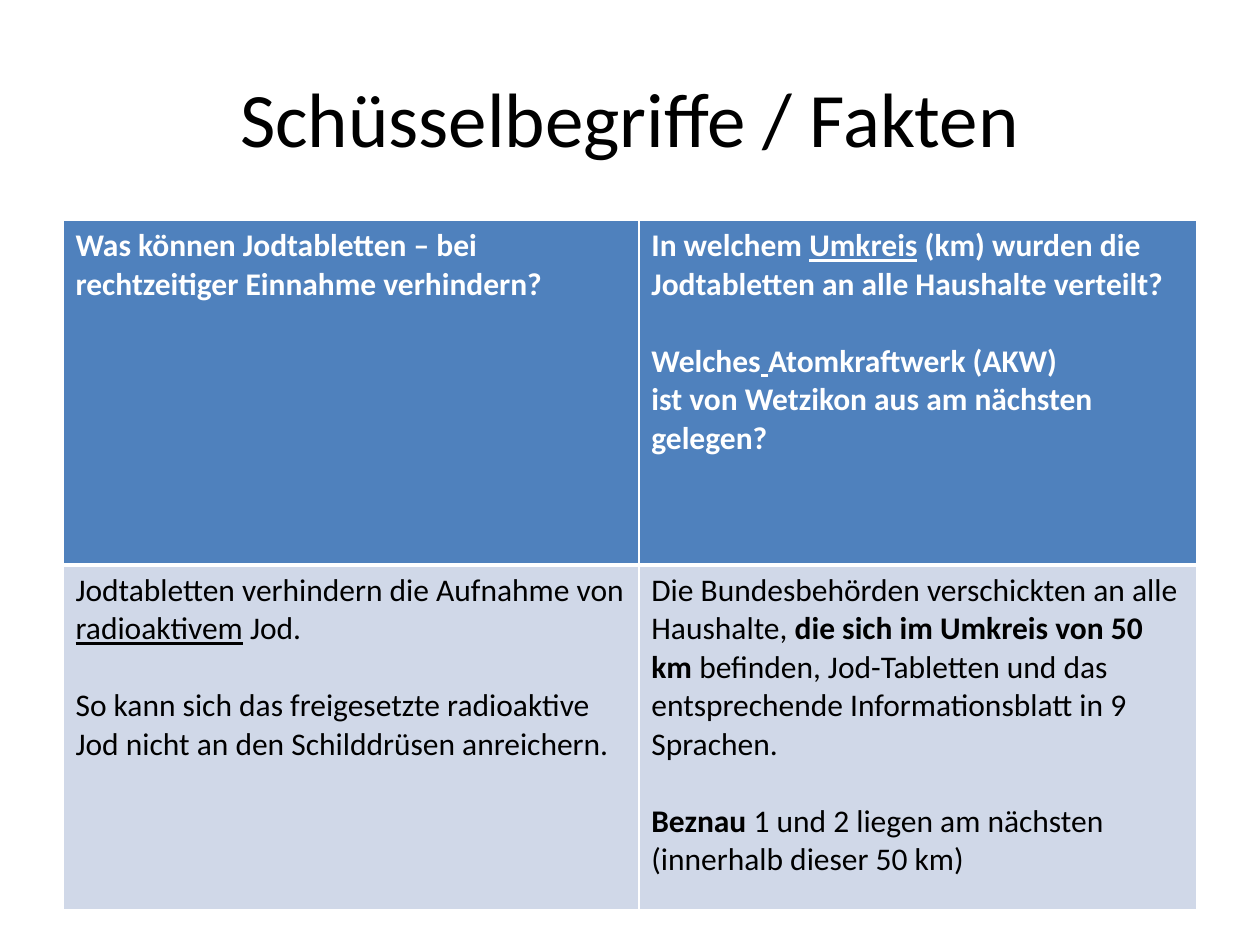
from lxml import etree
from pptx import Presentation
from pptx.dml.color import RGBColor
from pptx.enum.text import MSO_ANCHOR, PP_ALIGN
from pptx.oxml.ns import qn
from pptx.util import Inches, Pt

CENTER = PP_ALIGN.CENTER
MIDDLE = MSO_ANCHOR.MIDDLE
FONT = "Calibri"
TEXT_SIZE = 18
BLOCK_GAP = 22
PLAIN, BOLD, UNDERLINE = "plain", "bold", "underline"

QUESTIONS = [
    [
        (0, [("Was können Jodtabletten – bei rechtzeitiger Einnahme verhindern?", PLAIN)]),
    ],
    [
        (0, [("In welchem ", PLAIN), ("Umkreis", UNDERLINE),
             (" (km) wurden die Jodtabletten an alle Haushalte verteilt?", PLAIN)]),
        (BLOCK_GAP, [("Welches", PLAIN), (" ", UNDERLINE), ("Atomkraftwerk (AKW)", PLAIN)]),
        (0, [("ist von Wetzikon aus am nächsten gelegen?", PLAIN)]),
    ],
]
ANSWERS = [
    [
        (0, [("Jodtabletten verhindern die Aufnahme von ", PLAIN),
             ("radioaktivem", UNDERLINE), (" Jod.", PLAIN)]),
        (BLOCK_GAP, [("So kann sich das freigesetzte radioaktive Jod nicht an den "
                      "Schilddrüsen anreichern.", PLAIN)]),
    ],
    [
        (0, [("Die Bundesbehörden verschickten an alle Haushalte, ", PLAIN),
             ("die sich im Umkreis von 50 km ", BOLD),
             ("befinden, Jod-Tabletten und das entsprechende Informationsblatt in 9 Sprachen.",
              PLAIN)]),
        (BLOCK_GAP, [("Beznau", BOLD),
                     (" 1 und 2 liegen am nächsten (innerhalb dieser 50 km)", PLAIN)]),
    ],
]


def color(value):
    return RGBColor.from_string(value)


def style_font(font, size, value, bold=False):
    font.name = FONT
    font.size = Pt(size)
    font.bold = bold
    font.color.rgb = color(value)


def add_title(page, left, top, width, height):
    box = page.shapes.add_textbox(left, top, width, height)
    frame = box.text_frame
    frame.word_wrap = True
    frame.vertical_anchor = MIDDLE
    para = frame.paragraphs[0]
    para.text = "Schüsselbegriffe / Fakten"
    para.alignment = CENTER
    style_font(para.font, 44, "000000")


def set_borders(cell, widths):
    properties = cell._tc.get_or_add_tcPr()
    for side, width in widths.items():
        line = etree.SubElement(properties, qn(f"a:ln{side}"), w=str(Pt(width)))
        fill = etree.SubElement(line, qn("a:solidFill"))
        etree.SubElement(fill, qn("a:srgbClr"), val="FFFFFF")


def write_cell(cell, paragraphs, text_color, bold):
    frame = cell.text_frame
    for index, (gap, pieces) in enumerate(paragraphs):
        para = frame.add_paragraph() if index else frame.paragraphs[0]
        para.space_before = Pt(gap)
        style_font(para.font, TEXT_SIZE, text_color, bold)
        for text, style in pieces:
            span = para.add_run()
            span.text = text
            style_font(span.font, TEXT_SIZE, text_color, bold or style == BOLD)
            if style == UNDERLINE:
                span.font.underline = True


def add_facts_table(page, left, top, width, height):
    rows = [
        (QUESTIONS, "4F81BD", "FFFFFF", True, {"L": 1, "R": 1, "T": 1, "B": 3}),
        (ANSWERS, "D0D8E8", "000000", False, {"L": 1, "R": 1, "T": 3, "B": 1}),
    ]
    table = page.shapes.add_table(len(rows), 2, left, top, width, height).table
    table.columns[0].width = Inches(4.57)
    table.columns[1].width = width - Inches(4.57)
    for row, (contents, fill, text_color, bold, borders) in zip(table.rows, rows):
        row.height = height // len(rows)
        for cell, paragraphs in zip(row.cells, contents):
            set_borders(cell, borders)
            cell.fill.solid()
            cell.fill.fore_color.rgb = color(fill)
            write_cell(cell, paragraphs, text_color, bold)


def main():
    deck = Presentation()
    deck.slide_width = Inches(10)
    deck.slide_height = Inches(7.5)
    page = deck.slides.add_slide(deck.slide_layouts[6])
    add_title(page, Inches(0.5), Inches(0.3), Inches(9), Inches(1.25))
    add_facts_table(page, Inches(0.5), Inches(1.75), Inches(9), Inches(5.47))
    deck.save("out.pptx")


if __name__ == "__main__":
    main()
